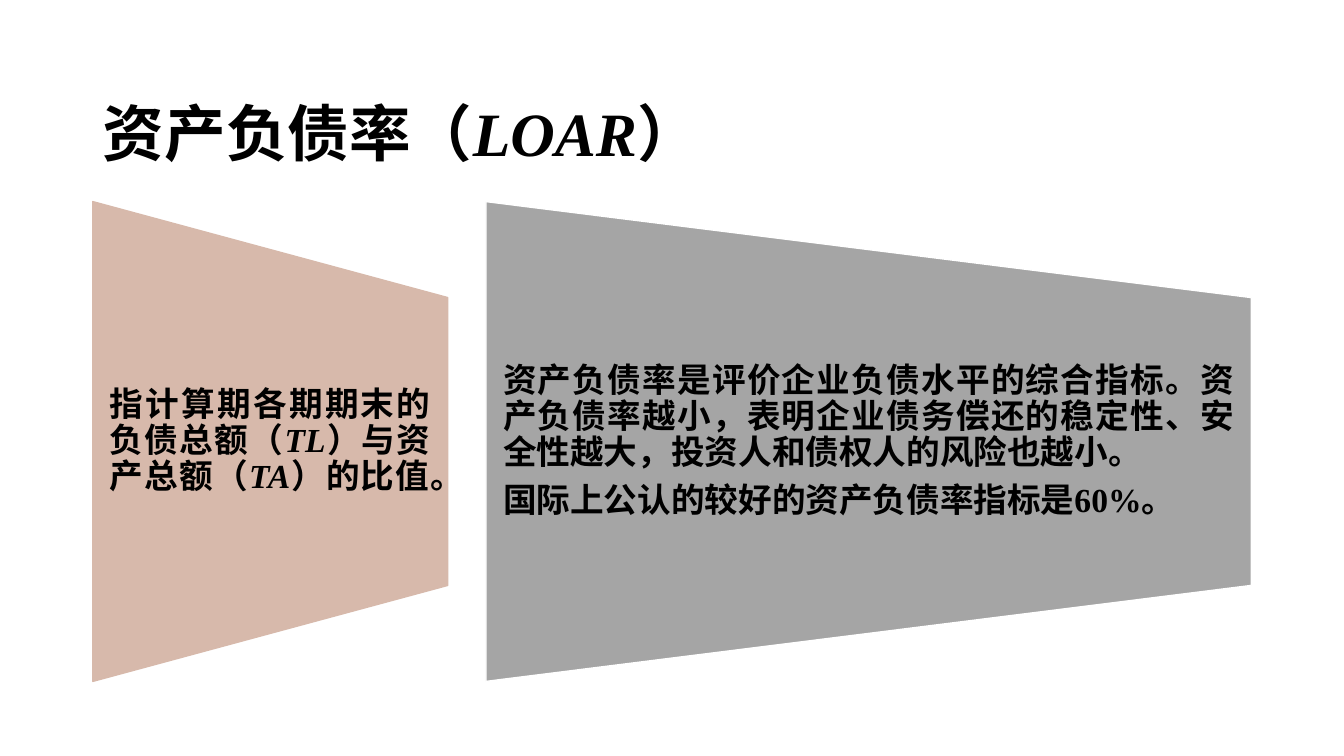
from pptx import Presentation
from pptx.dml.color import RGBColor
from pptx.enum.shapes import MSO_SHAPE as Kind
from pptx.enum.text import MSO_ANCHOR as Anchor, MSO_AUTO_SIZE as Fit, PP_ALIGN as Align
from pptx.util import Inches, Pt

BLACK = RGBColor(0x00, 0x00, 0x00)
WHITE = RGBColor(0xFF, 0xFF, 0xFF)
ROSE = RGBColor(0xD7, 0xB9, 0xAB)
GRAY = RGBColor(0xA5, 0xA5, 0xA5)
FONT = "Times New Roman"
TERMS = ("LOAR", "TL", "TA")

TITLE = ["资产负债率（", "LOAR", "）"]
PANELS = [
    (0.92, 3.52, ROSE, ROSE, [
        ["指计算期各期期末的负债总额（", "TL", "）与资产总额（", "TA", "）的比值。"],
    ]),
    (4.82, 7.59, GRAY, WHITE, [
        ["资产负债率是评价企业负债水平的综合指标。资产负债率越小，"
         "表明企业债务偿还的稳定性、安全性越大，投资人和债权人的风险也越小。"],
        ["国际上公认的较好的资产负债率指标是60%。"],
    ]),
]
MID, TALL, TEXT_H = 4.38, 4.76, 2.86


def place(shape, left, top, width, height):
    shape.left, shape.top = Inches(left), Inches(top)
    shape.width, shape.height = Inches(width), Inches(height)


def write(frame, lines, size, space, after=0):
    frame.word_wrap = True
    frame.auto_size = Fit.NONE
    frame.vertical_anchor = Anchor.MIDDLE
    for i, parts in enumerate(lines):
        para = frame.add_paragraph() if i else frame.paragraphs[0]
        para.alignment = Align.JUSTIFY
        para.line_spacing = space
        para.space_before, para.space_after = Pt(0), Pt(after)
        font = para.font
        font.name, font.size, font.bold = FONT, Pt(size), True
        font.color.rgb = BLACK
        for part in parts:
            run = para.add_run()
            run.text = part
            if part in TERMS:
                run.font.italic = True


def add_panel(shapes, left, width, fill, line, lines):
    side = left + (width - TALL) / 2
    top = MID - width / 2
    panel = shapes.add_shape(Kind.FLOWCHART_MANUAL_OPERATION, Inches(side),
                             Inches(top), Inches(TALL), Inches(width))
    panel.rotation = 270
    panel.shadow.inherit = False
    panel.fill.solid()
    panel.fill.fore_color.rgb = fill
    panel.line.color.rgb = line
    panel.line.width = Pt(1)

    box = shapes.add_textbox(Inches(left), Inches(MID - TEXT_H / 2),
                             Inches(width), Inches(TEXT_H))
    frame = box.text_frame
    frame.margin_left = frame.margin_right = Inches(0.17)
    frame.margin_top = frame.margin_bottom = 0
    write(frame, lines, 24, 0.9, 8.4)


def main():
    deck = Presentation()
    deck.slide_width, deck.slide_height = Inches(13.33), Inches(7.5)
    shapes = deck.slides.add_slide(deck.slide_layouts[5]).shapes
    place(shapes.title, 0.92, 0.4, 11.5, 1.45)
    write(shapes.title.text_frame, [TITLE], 44, 1.5)
    for panel in PANELS:
        add_panel(shapes, *panel)
    deck.save("out.pptx")


if __name__ == "__main__":
    main()
